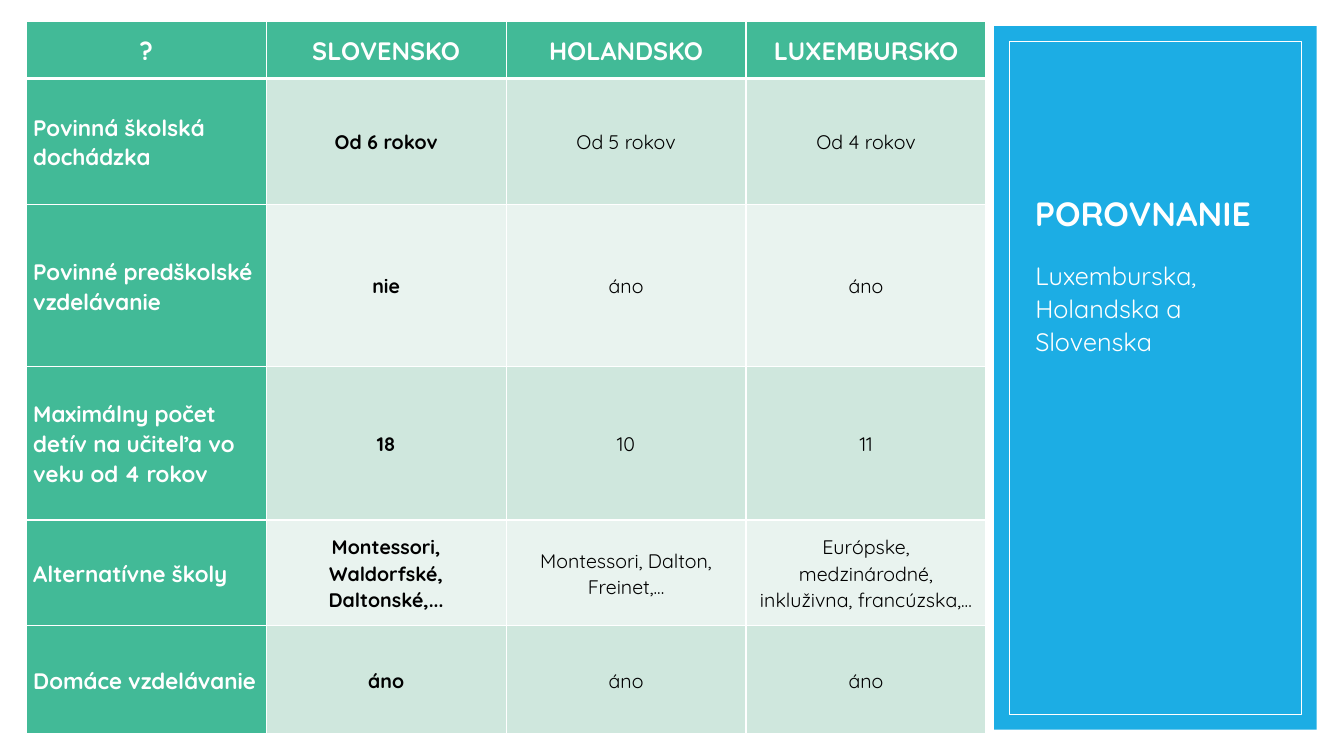
"""Build a slide comparing schooling in Slovakia, the Netherlands and Luxembourg."""
from lxml import etree
from pptx import Presentation
from pptx.dml.color import RGBColor
from pptx.enum.shapes import MSO_SHAPE
from pptx.enum.text import MSO_ANCHOR, PP_ALIGN
from pptx.oxml.ns import qn
from pptx.util import Inches, Pt

RECTANGLE = MSO_SHAPE.RECTANGLE
MIDDLE, BOTTOM = MSO_ANCHOR.MIDDLE, MSO_ANCHOR.BOTTOM
LEFT, CENTER = PP_ALIGN.LEFT, PP_ALIGN.CENTER

FONT = "Quicksand"
WHITE, BLACK = "FFFFFF", "000000"
GREEN, BLUE = "42BA97", "1CADE4"
BANDS = ["E9F3EF", "CFE7DD"]

COLUMN_WIDTH = 2.38
ROW_HEIGHTS = [0.57, 1.25, 1.61, 1.52, 1.05, 1.07]
ROWS = [
    ["?", "SLOVENSKO", "HOLANDSKO", "LUXEMBURSKO"],
    ["Povinná školská dochádzka", "Od 6 rokov", "Od 5 rokov", "Od 4 rokov"],
    ["Povinné predškolské vzdelávanie", "nie", "áno", "áno"],
    ["Maximálny počet detív na učiteľa vo veku od 4 rokov", "18", "10", "11"],
    ["Alternatívne školy", "Montessori, Waldorfské, Daltonské,...",
     "Montessori, Dalton, Freinet,...",
     "Európske, medzinárodné, inkluživna, francúzska,..."],
    ["Domáce vzdelávanie", "áno", "áno", "áno"],
]
PANEL_LEFT, PANEL_TOP, PANEL_WIDTH, PANEL_HEIGHT = 9.86, 0.26, 3.2, 6.98
FRAME_INSET = 0.15


def color(value):
    return RGBColor.from_string(value)


def write(frame, text, size, ink, bold, align, spacing):
    paragraph = frame.paragraphs[0]
    paragraph.alignment = align
    paragraph.line_spacing = spacing
    run = paragraph.add_run()
    run.text = text
    run.font.name = FONT
    run.font.size = Pt(size)
    run.font.bold = bold
    run.font.color.rgb = color(ink)
    return paragraph


presentation = Presentation()
presentation.slide_width = Inches(13.33)
presentation.slide_height = Inches(7.5)
slide = presentation.slides.add_slide(presentation.slide_layouts[5])

for inset in (0, FRAME_INSET):
    panel = slide.shapes.add_shape(
        RECTANGLE, Inches(PANEL_LEFT + inset), Inches(PANEL_TOP + inset),
        Inches(PANEL_WIDTH - 2 * inset), Inches(PANEL_HEIGHT - 2 * inset))
    panel.shadow.inherit = False
    if inset:
        panel.fill.background()
        panel.line.color.rgb = color(WHITE)
        panel.line.width = Pt(0.5)
    else:
        panel.fill.solid()
        panel.fill.fore_color.rgb = color(BLUE)
        panel.line.fill.background()

title = slide.shapes.title
title.left, title.top = Inches(9.95), Inches(0.66)
title.width, title.height = Inches(2.77), Inches(1.71)
title.text_frame.vertical_anchor = BOTTOM
title.text_frame.word_wrap = True
write(title.text_frame, "POROVNANIE", 24, WHITE, True, CENTER, 0.9)
slide.shapes._spTree.append(title._element)

table = slide.shapes.add_table(
    len(ROWS), len(ROWS[0]), Inches(0.26), Inches(0.21),
    Inches(COLUMN_WIDTH * len(ROWS[0])), Inches(sum(ROW_HEIGHTS))).table
table.horz_banding = False
for column in table.columns:
    column.width = Inches(COLUMN_WIDTH)

for row_index, (texts, height) in enumerate(zip(ROWS, ROW_HEIGHTS)):
    table.rows[row_index].height = Inches(height)
    is_header = row_index == 0
    for column_index, text in enumerate(texts):
        cell = table.cell(row_index, column_index)
        is_label = column_index == 0
        is_green = is_header or is_label
        cell.vertical_anchor = MIDDLE
        cell.margin_left = cell.margin_right = Inches(0.07)
        cell.margin_top = cell.margin_bottom = 0

        properties = cell._tc.get_or_add_tcPr()
        widths = {"a:lnL": 1, "a:lnR": 1,
                  "a:lnT": 3 if row_index == 1 else 1,
                  "a:lnB": 3 if is_header else 1}
        for side, width in widths.items():
            border = etree.SubElement(properties, qn(side), w=str(Pt(width)))
            solid = etree.SubElement(border, qn("a:solidFill"))
            etree.SubElement(solid, qn("a:srgbClr"), val=WHITE)
        cell.fill.solid()
        cell.fill.fore_color.rgb = color(GREEN if is_green else BANDS[row_index % 2])

        size = 18 if is_header else 16 if is_label else 14
        write(cell.text_frame, text, size, WHITE if is_green else BLACK,
              is_header or column_index < 2,
              LEFT if is_label and not is_header else CENTER, 1.07)

subtitle = slide.shapes.add_textbox(
    Inches(10.17), Inches(2.5), Inches(2.66), Inches(3.83))
subtitle.text_frame.word_wrap = True
paragraph = write(subtitle.text_frame, "Luxemburska, Holandska a Slovenska",
                  18, WHITE, False, LEFT, 1.1)
paragraph.space_before = Pt(8)

presentation.save("out.pptx")
